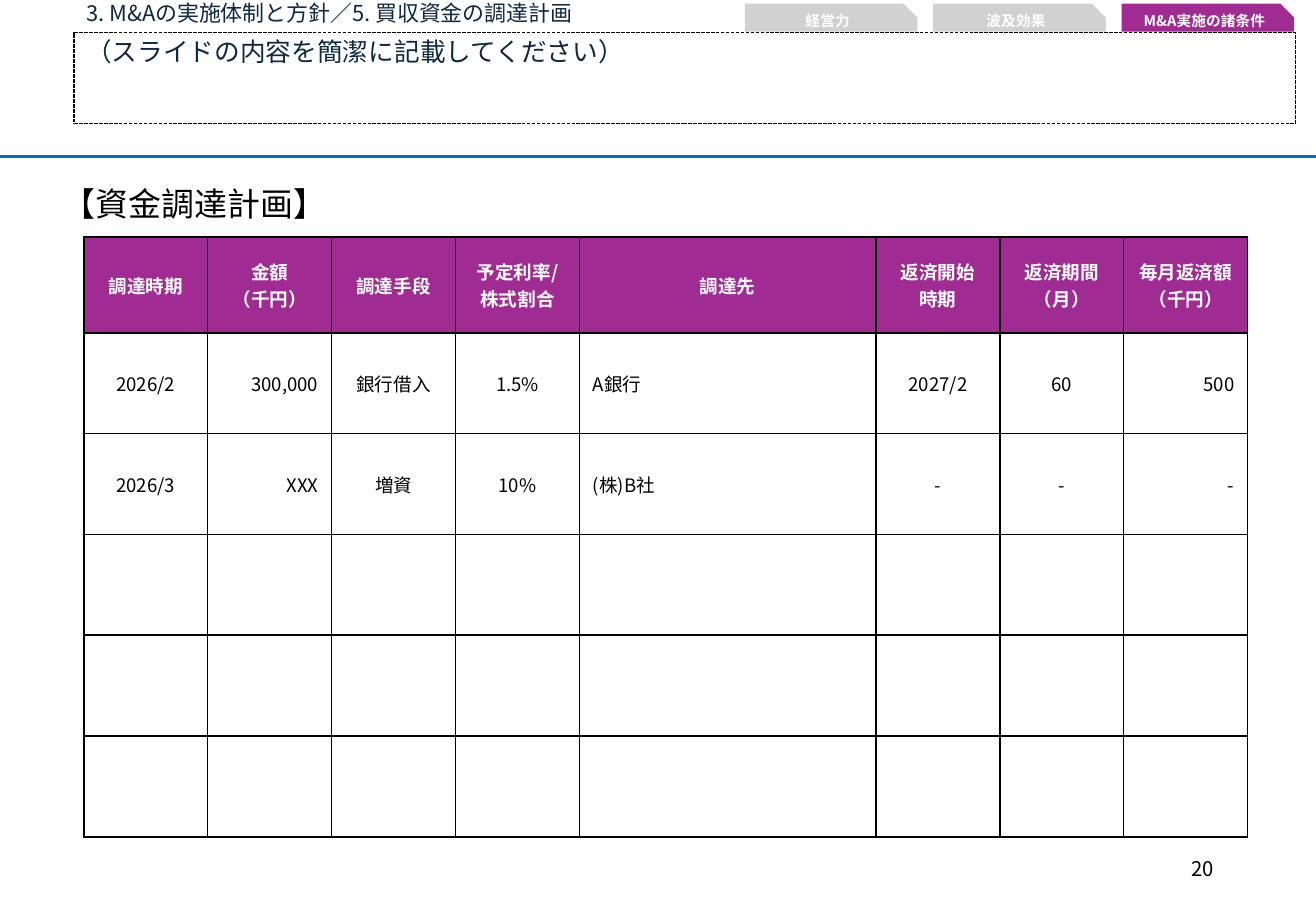
import pptx
import pptx.dml.color
import pptx.enum.dml
import pptx.enum.shapes
import pptx.enum.text
import pptx.oxml
import pptx.oxml.ns
import pptx.util
from lxml import etree

RGBColor = pptx.dml.color.RGBColor
ALIGN = pptx.enum.text.PP_ALIGN
ANCHOR = pptx.enum.text.MSO_ANCHOR
SHAPE = pptx.enum.shapes.MSO_SHAPE
qn = pptx.oxml.ns.qn

BLACK = RGBColor(0x00, 0x00, 0x00)
WHITE = RGBColor(0xFF, 0xFF, 0xFF)
NAVY = RGBColor(0x0E, 0x28, 0x41)
BLUE = RGBColor(0x00, 0x70, 0xC0)
GRAY = RGBColor(0xD1, 0xD1, 0xD1)
PURPLE = RGBColor(0xA0, 0x2B, 0x93)

EMU_PER_PX = 9144  # 100 px to the inch
WIDTH, HEIGHT = 1083, 750

TABS = [("経営力", GRAY), ("波及効果", GRAY), ("M&A実施の諸条件", PURPLE)]
TAB_LEFT, TAB_STEP = 613, 155

COLUMN_WIDTHS = [102, 102, 102, 102, 244, 102, 102, 102]
ROW_HEIGHTS = [79] + [83] * 5
COLUMN_ALIGNS = [ALIGN.CENTER, ALIGN.RIGHT, ALIGN.CENTER, ALIGN.CENTER,
                 ALIGN.LEFT, ALIGN.CENTER, ALIGN.CENTER, ALIGN.RIGHT]
FUNDING_PLAN = [
    ["調達時期", "金額\n（千円）", "調達手段", "予定利率/\n株式割合",
     "調達先", "返済開始\n時期", "返済期間\n（月）", "毎月返済額\n（千円）"],
    ["2026/2", "300,000", "銀行借入", "1.5%", "A銀行", "2027/2", "60", "500"],
    ["2026/3", "XXX", "増資", "10%", "(株)B社", "-", "-", "-"],
]


def px(length):
    return pptx.util.Emu(length * EMU_PER_PX)


def set_values(target, values):
    for name, value in values.items():
        setattr(target, name, value)


class SlideBuilder:
    font_name = "Noto Sans CJK JP"

    def __init__(self, slide):
        self.slide = slide

    def fill_text(self, frame, text, size, color, bold=False, **paragraph_format):
        """Fill a text frame, one paragraph to each line of text."""
        frame.text = text
        for paragraph in frame.paragraphs:
            set_values(paragraph, paragraph_format)
            for run in paragraph.runs:
                set_values(run.font, {"name": self.font_name, "bold": bold,
                                      "size": pptx.util.Pt(size)})
                run.font.color.rgb = color
                east_asian = etree.SubElement(run.font._element, qn("a:ea"))
                east_asian.set("typeface", self.font_name)

    def placeholder(self, index, box, text, size):
        shape = self.slide.placeholders[index]
        set_values(shape, dict(zip(("left", "top", "width", "height"), map(px, box))))
        set_values(shape.text_frame, {"vertical_anchor": ANCHOR.TOP, "word_wrap": True,
                                      "auto_size": pptx.enum.text.MSO_AUTO_SIZE.NONE})
        self.fill_text(shape.text_frame, text, size, NAVY, alignment=ALIGN.LEFT,
                       line_spacing=0.9, space_before=pptx.util.Pt(0))
        properties = shape.text_frame.paragraphs[0]._p.get_or_add_pPr()
        properties.set("marL", "0")
        properties.set("indent", "0")
        etree.SubElement(properties, qn("a:buNone"))
        return shape

    def textbox(self, box, text, size, anchor, align):
        frame = self.slide.shapes.add_textbox(*map(px, box)).text_frame
        set_values(frame, {"word_wrap": True, "vertical_anchor": anchor})
        self.fill_text(frame, text, size, BLACK, alignment=align)

    def tab(self, box, text, fill):
        shape = self.slide.shapes.add_shape(SHAPE.SNIP_1_RECTANGLE, *map(px, box))
        shape.adjustments[0] = 0.5
        shape.shadow.inherit = False
        shape.fill.solid()
        shape.fill.fore_color.rgb = fill
        shape.line.fill.background()
        shape.text_frame.vertical_anchor = ANCHOR.MIDDLE
        self.fill_text(shape.text_frame, text, 8.7, WHITE, bold=True, alignment=ALIGN.CENTER)

    def rule(self, top):
        line = self.slide.shapes.add_connector(
            pptx.enum.shapes.MSO_CONNECTOR.STRAIGHT, px(0), px(top), px(WIDTH), px(top))
        line.line.color.rgb = BLUE
        line.line.width = pptx.util.Pt(2)
        etree.SubElement(line._element.spPr, qn("a:effectLst"))

    def border(self, cell):
        properties = cell._tc.get_or_add_tcPr()
        for side in ("lnL", "lnR", "lnT", "lnB"):
            line = etree.SubElement(properties, qn("a:" + side), w=str(pptx.util.Pt(1)))
            fill = etree.SubElement(line, qn("a:solidFill"))
            etree.SubElement(fill, qn("a:srgbClr"), val=str(BLACK))

    def table(self, left, top, rows):
        table = self.slide.shapes.add_table(
            len(ROW_HEIGHTS), len(COLUMN_WIDTHS), px(left), px(top),
            px(sum(COLUMN_WIDTHS)), px(sum(ROW_HEIGHTS))).table
        table.horz_banding = False
        for column, width in zip(table.columns, COLUMN_WIDTHS):
            column.width = px(width)
        for row, height in zip(table.rows, ROW_HEIGHTS):
            row.height = px(height)
        for cell in table.iter_cells():
            self.border(cell)
            cell.fill.background()
        for row_index, texts in enumerate(rows):
            header = row_index == 0
            for column_index, text in enumerate(texts):
                cell = table.cell(row_index, column_index)
                set_values(cell, {"vertical_anchor": ANCHOR.MIDDLE,
                                  "margin_left": px(11), "margin_right": px(11),
                                  "margin_top": px(5), "margin_bottom": px(5)})
                if header:
                    cell.fill.solid()
                    cell.fill.fore_color.rgb = PURPLE
                self.fill_text(
                    cell.text_frame, text, 11, WHITE if header else BLACK, bold=header,
                    alignment=ALIGN.CENTER if header else COLUMN_ALIGNS[column_index])


def main():
    presentation = pptx.Presentation()
    set_values(presentation, {"slide_width": px(WIDTH), "slide_height": px(HEIGHT)})
    builder = SlideBuilder(presentation.slides.add_slide(presentation.slide_layouts[1]))

    builder.rule(129)
    builder.placeholder(0, (61, -3, 561, 30), "3. M&Aの実施体制と方針／5. 買収資金の調達計画", 13)
    summary = builder.placeholder(1, (61, 27, 1005, 75),
                                  "（スライドの内容を簡潔に記載してください）", 15.2)
    summary.line.color.rgb = BLACK
    set_values(summary.line, {"width": pptx.util.Pt(0.75),
                              "dash_style": pptx.enum.dml.MSO_LINE.SQUARE_DOT})
    for index, (text, fill) in enumerate(TABS):
        builder.tab((TAB_LEFT + index * TAB_STEP, 3, 142, 23), text, fill)
    builder.textbox((765, 695, 244, 40), "20", 12, ANCHOR.MIDDLE, ALIGN.RIGHT)
    builder.textbox((42, 146, 287, 43), "【資金調達計画】", 19.5, ANCHOR.TOP, ALIGN.LEFT)
    builder.table(69, 195, FUNDING_PLAN)

    presentation.save("out.pptx")


if __name__ == "__main__":
    main()
